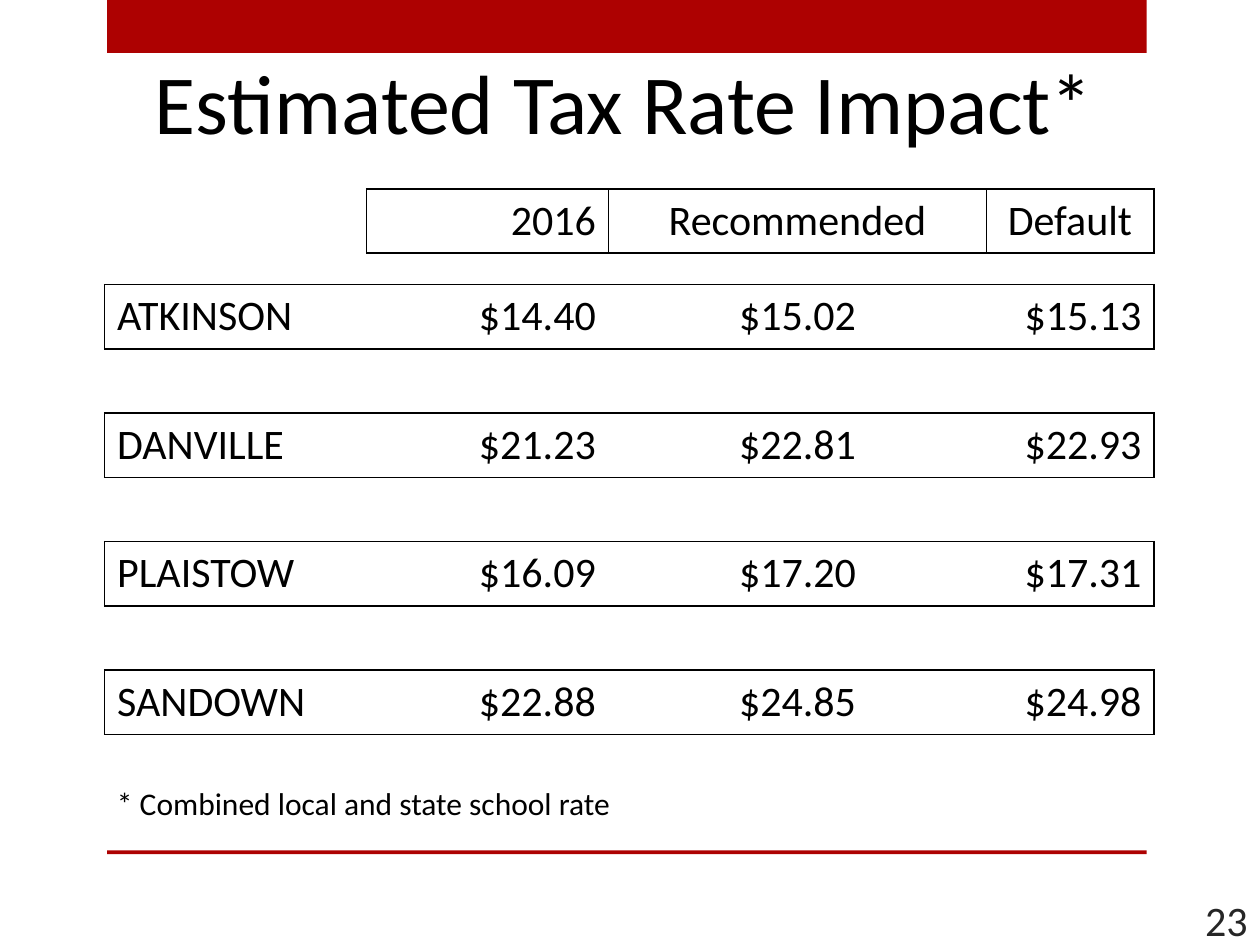
from lxml import etree
from pptx import Presentation
from pptx import util as u
from pptx.dml.color import RGBColor
from pptx.enum import shapes, text
from pptx.oxml.ns import qn

RED, BLACK, GRAY = "AD0101", "000000", "262626"
LEFT, RIGHT, CENTER = text.PP_ALIGN.LEFT, text.PP_ALIGN.RIGHT, text.PP_ALIGN.CENTER
NO_STYLE = "{2D5ABB26-0587-4C30-8999-92F81FD0307C}"
COLUMN_WIDTHS = (2.08, 1.92, 3, 1.33)
COLUMN_ALIGNS = (LEFT, RIGHT, CENTER, RIGHT)
ROW_HEIGHT, GAP_HEIGHT = 0.51, 0.25
HEADINGS = ("", "2016", "Recommended", "Default ")
TOWN_RATES = (
    ("ATKINSON", "$14.40", "$15.02", "$15.13"),
    ("DANVILLE", "$21.23", "$22.81", "$22.93"),
    ("PLAISTOW", "$16.09", "$17.20", "$17.31"),
    ("SANDOWN", "$22.88", "$24.85", "$24.98"),
)


def color(value):
    """Turn a hex string into a colour."""
    return RGBColor.from_string(value)


def write(frame, words, size=24, fill=BLACK, align=LEFT):
    """Put one formatted paragraph into a text frame."""
    para = frame.paragraphs[0]
    para.alignment = align
    span = para.add_run()
    span.text = words
    span.font.name = "Calibri"
    span.font.size = u.Pt(size)
    span.font.color.rgb = color(fill)


def add_bar(page, top, height):
    """Add a red bar across the content width."""
    bar = page.shapes.add_shape(
        shapes.MSO_SHAPE.RECTANGLE,
        u.Inches(0.85), u.Inches(top), u.Inches(8.25), u.Inches(height))
    bar.shadow.inherit = False
    bar.fill.solid()
    bar.fill.fore_color.rgb = color(RED)
    bar.line.fill.background()


def add_text(page, words, left, top, width, height,
             anchor=text.MSO_ANCHOR.TOP, **style):
    """Add a wrapped text box."""
    box = page.shapes.add_textbox(
        u.Inches(left), u.Inches(top), u.Inches(width), u.Inches(height))
    box.text_frame.word_wrap = True
    box.text_frame.vertical_anchor = anchor
    write(box.text_frame, words, **style)


def add_borders(cell, sides):
    """Draw one-point black borders on the given sides of a cell."""
    properties = cell._tc.get_or_add_tcPr()
    for side in sides:
        line = etree.SubElement(properties, qn(f"a:ln{side}"), w=str(u.Pt(1)))
        fill = etree.SubElement(line, qn("a:solidFill"))
        etree.SubElement(fill, qn("a:srgbClr"), val=BLACK)


def fill_row(table, row, values, sides):
    """Write one row of values and its borders."""
    for column, (value, align) in enumerate(zip(values, COLUMN_ALIGNS)):
        cell = table.cell(row, column)
        if value:
            write(cell.text_frame, value, align=align)
            add_borders(cell, sides[column])


def add_rate_table(page):
    """Add the tax rates, with an empty row before each town."""
    row_count = 1 + 2 * len(TOWN_RATES)
    heights = [ROW_HEIGHT] * row_count
    heights[1] = GAP_HEIGHT
    frame = page.shapes.add_table(
        row_count, len(COLUMN_WIDTHS), u.Inches(0.83), u.Inches(1.5),
        u.Inches(sum(COLUMN_WIDTHS)), u.Inches(sum(heights)))
    table = frame.table
    table.first_row = table.horz_banding = False
    table._tbl.tblPr.find(qn("a:tableStyleId")).text = NO_STYLE
    for column, width in zip(table.columns, COLUMN_WIDTHS):
        column.width = u.Inches(width)
    for row, height in zip(table.rows, heights):
        row.height = u.Inches(height)

    fill_row(table, 0, HEADINGS, ("", "LTB", "LTB", "RTB"))
    for index, rates in enumerate(TOWN_RATES):
        fill_row(table, 2 + 2 * index, rates, ("LTB", "TB", "TB", "RTB"))
    for cell in table.iter_cells():
        cell.fill.background()
        if not cell.text:
            para = cell.text_frame.paragraphs[0]
            etree.SubElement(para._p, qn("a:endParaRPr"), sz="800")


def main():
    """Build the slide and save it."""
    deck = Presentation()
    deck.slide_width, deck.slide_height = u.Inches(10), u.Inches(7.5)
    page = deck.slides.add_slide(deck.slide_layouts[6])
    add_bar(page, 0, 0.42)
    add_bar(page, 6.75, 0.03)
    add_text(page, "Estimated Tax Rate Impact*", 0.83, 0.42, 8.25, 0.83,
             anchor=text.MSO_ANCHOR.BOTTOM, size=48, align=CENTER)
    add_rate_table(page)
    add_text(page, "* Combined local and state school rate",
             0.83, 6.17, 8.25, 0.4, size=18)
    add_text(page, "23", 9.17, 7.1, 0.83, 0.4,
             anchor=text.MSO_ANCHOR.MIDDLE, fill=GRAY, align=RIGHT)
    deck.save("out.pptx")


if __name__ == "__main__":
    main()
